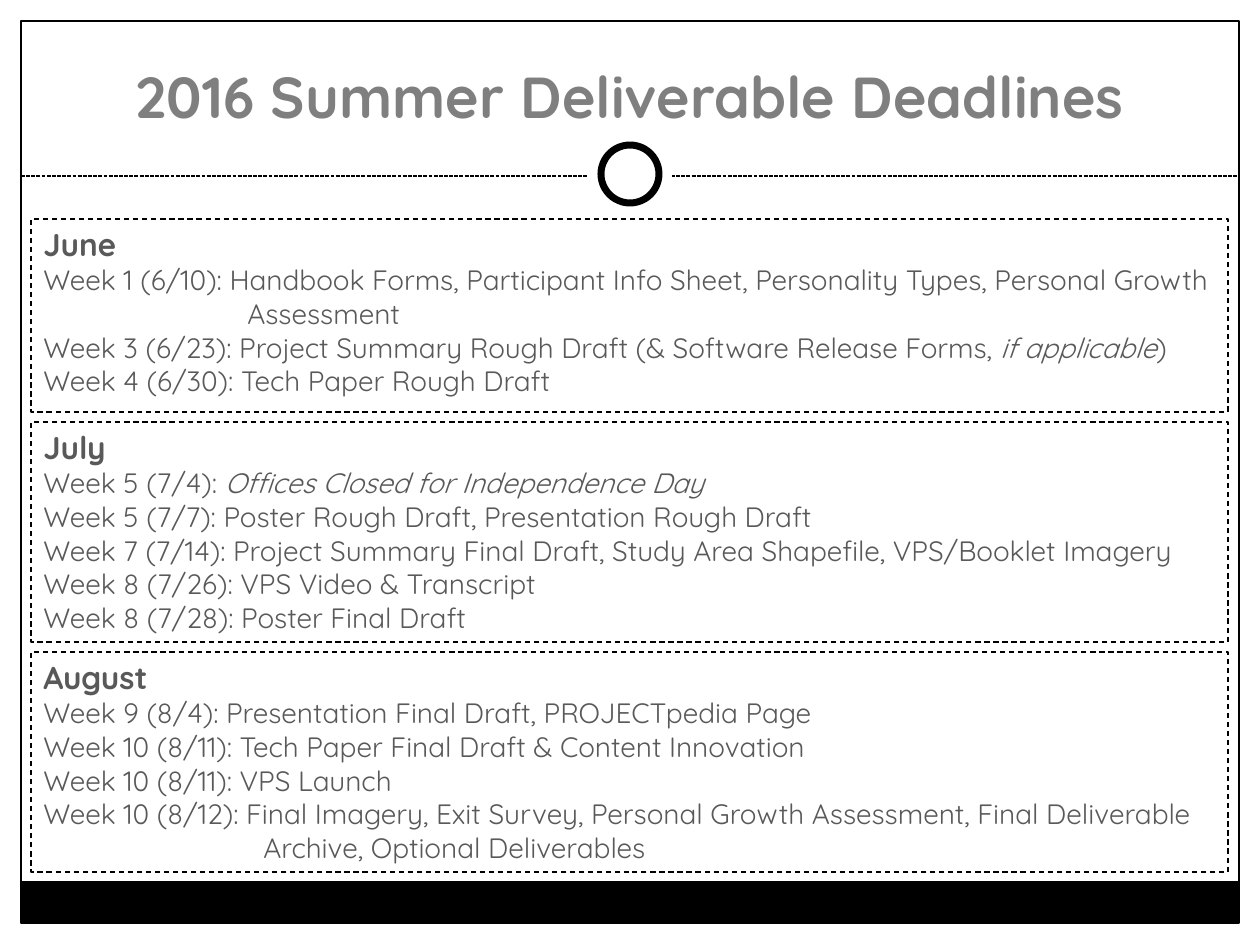
from pptx import Presentation
from pptx import util as u
from pptx.dml.color import RGBColor
from pptx.enum import dml, shapes, text
from lxml import etree

SCALE = 914400 / 126
FONT = "Quicksand"
GREY = "595959"
MONTH_GAP = 10


def px(*lengths):
    return [u.Emu(round(length * SCALE)) for length in lengths]


def color(target, value):
    target.rgb = RGBColor.from_string(value)


presentation = Presentation()
presentation.slide_width, presentation.slide_height = px(1260, 945)
slide = presentation.slides.add_slide(presentation.slide_layouts[6])

RECTANGLE = shapes.MSO_SHAPE.RECTANGLE
OVAL = shapes.MSO_SHAPE.OVAL
decorations = [
    (RECTANGLE, (0, 0, 1260, 192), "FFFFFF", None),
    (RECTANGLE, (0, 0, 21, 945), "FFFFFF", None),
    (RECTANGLE, (1239, 0, 21, 945), "FFFFFF", None),
    (RECTANGLE, (21, 881, 1218, 43), "000000", None),
    (RECTANGLE, (21, 21, 1218, 902), None, 0.75),
    ("divider", (21, 176, 1239, 176), None, 0.75),
    (OVAL, (588, 132, 84, 84), "FFFFFF", None),
    (OVAL, (601, 145, 58, 58), "FFFFFF", 4),
]
for kind, box, fill, line_width in decorations:
    if kind == "divider":
        shape = slide.shapes.add_connector(shapes.MSO_CONNECTOR.STRAIGHT, *px(*box))
        shape.line.dash_style = dml.MSO_LINE.SQUARE_DOT
        etree.SubElement(
            shape._element.spPr,
            "{http://schemas.openxmlformats.org/drawingml/2006/main}effectLst",
        )
    else:
        shape = slide.shapes.add_shape(kind, *px(*box))
        shape.shadow.inherit = False
        if fill:
            shape.fill.solid()
            color(shape.fill.fore_color, fill)
        else:
            shape.fill.background()
    if line_width:
        color(shape.line.color, "000000")
        shape.line.width = u.Pt(line_width)
    else:
        shape.line.fill.background()

title = slide.shapes.add_textbox(*px(42, 31, 1176, 105))
title.text_frame.word_wrap = True
title.text_frame.vertical_anchor = text.MSO_ANCHOR.BOTTOM
paragraph = title.text_frame.paragraphs[0]
paragraph.alignment = text.PP_ALIGN.CENTER
run = paragraph.add_run()
run.text = "2016 Summer Deliverable Deadlines"
for name, value in {"name": FONT, "size": u.Pt(33), "bold": True}.items():
    setattr(run.font, name, value)
color(run.font.color, "7F7F7F")

months = [
    ("June", 193, [
        (204, ["Week 1 (6/10): Handbook Forms, Participant Info Sheet, Personality Types, "
               "Personal Growth Assessment"]),
        (0, ["Week 3 (6/23): Project Summary Rough Draft (& Software Release Forms, ",
             "if applicable", ")"]),
        (0, ["Week 4 (6/30): Tech Paper Rough Draft"]),
    ]),
    ("July", 220, [
        (220, ["Week 5 (7/4): ", "Offices Closed for Independence Day"]),
        (220, ["Week 5 (7/7): Poster Rough Draft, Presentation Rough Draft"]),
        (220, ["Week 7 (7/14): Project Summary Final Draft, Study Area Shapefile, "
               "VPS/Booklet Imagery"]),
        (220, ["Week 8 (7/26): VPS Video & Transcript"]),
        (220, ["Week 8 (7/28): Poster Final Draft"]),
    ]),
    ("August", 220, [
        (0, ["Week 9 (8/4): Presentation Final Draft, PROJECTpedia Page"]),
        (220, ["Week 10 (8/11): Tech Paper Final Draft & Content Innovation"]),
        (220, ["Week 10 (8/11): VPS Launch"]),
        (220, ["Week 10 (8/12): Final Imagery, Exit Survey, Personal Growth Assessment, "
               "Final Deliverable Archive, Optional Deliverables"]),
    ]),
]
top = 219
for month, height, deadlines in months:
    shape = slide.shapes.add_shape(RECTANGLE, *px(31, top, 1197, height))
    shape.shadow.inherit = False
    shape.fill.background()
    color(shape.line.color, "000000")
    shape.line.width = u.Pt(0.75)
    shape.line.dash_style = dml.MSO_LINE.DASH
    frame = shape.text_frame
    frame.word_wrap = True
    frame.vertical_anchor = text.MSO_ANCHOR.TOP
    for index, (hanging, pieces) in enumerate([(0, [month])] + deadlines):
        paragraph = frame.add_paragraph() if index else frame.paragraphs[0]
        paragraph.alignment = text.PP_ALIGN.LEFT
        if hanging:
            indent = px(hanging)[0]
            properties = paragraph._p.get_or_add_pPr()
            properties.set("marL", str(indent))
            properties.set("indent", str(-indent))
        for position, piece in enumerate(pieces):
            run = paragraph.add_run()
            run.text = piece
            font_format = {
                "name": FONT,
                "size": u.Pt(16 if index else 18),
                "bold": index == 0,
                "italic": position == 1,
            }
            for name, value in font_format.items():
                setattr(run.font, name, value)
            color(run.font.color, GREY)
    top += height + MONTH_GAP

presentation.save("out.pptx")
